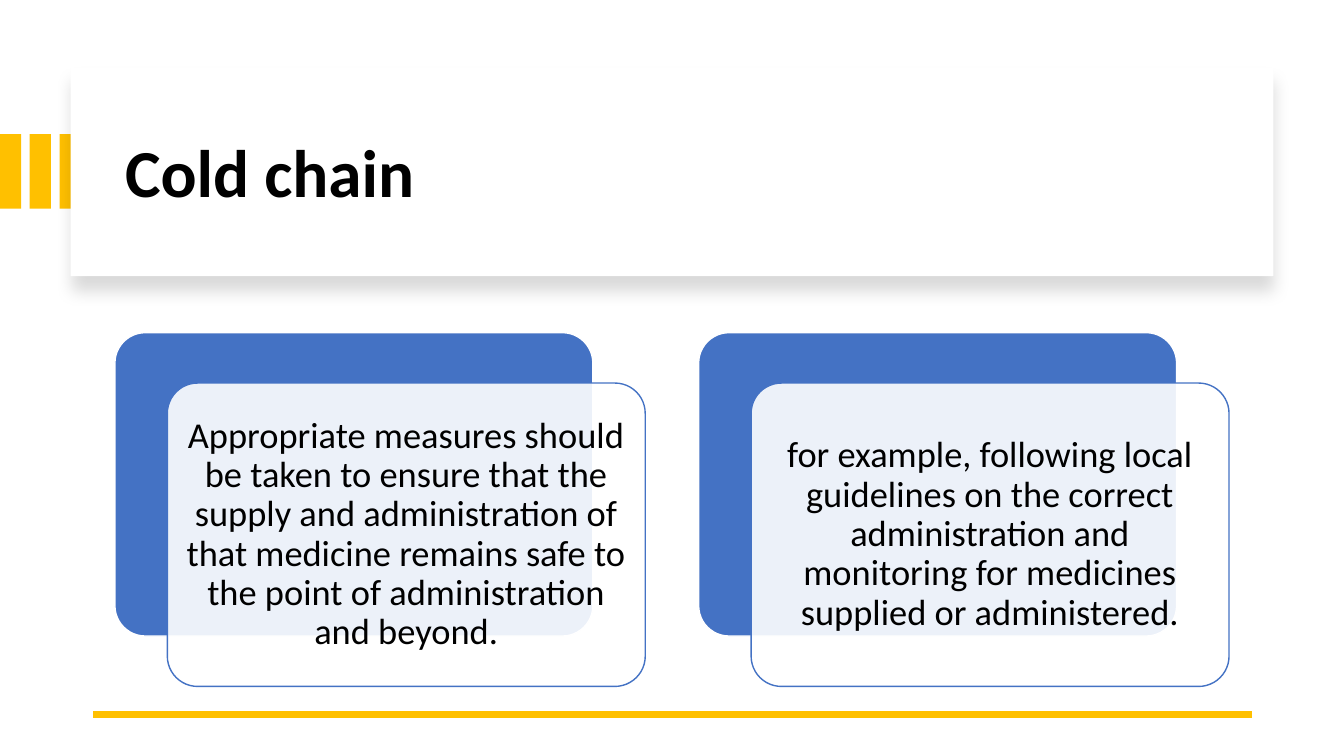
import dataclasses
import lxml.etree
import pptx
import pptx.dml.color
import pptx.enum.shapes
import pptx.enum.text
import pptx.oxml.ns
import pptx.util

Inches = pptx.util.Inches
Pt = pptx.util.Pt
Align = pptx.enum.text.PP_ALIGN
Kind = pptx.enum.shapes.MSO_SHAPE
qn = pptx.oxml.ns.qn

HUES = {"gold": "FFC000", "blue": "4472C4", "white": "FFFFFF", "black": "000000"}
FONT = "Calibri"


@dataclasses.dataclass
class Box:
    left: float
    top: float
    width: float
    height: float

    def lengths(self) -> list:
        return [Inches(v) for v in (self.left, self.top, self.width, self.height)]


@dataclasses.dataclass
class Card:
    left: float
    text: str


CARDS = [
    Card(1.14, "Appropriate measures should be taken to ensure that the supply and "
               "administration of that medicine remains safe to the point of "
               "administration and beyond."),
    Card(6.93, "for example, following local guidelines on the correct administration "
               "and monitoring for medicines supplied or administered."),
]


def hue(name: str) -> pptx.dml.color.RGBColor:
    return pptx.dml.color.RGBColor.from_string(HUES[name])


def draw(slide, kind, box: Box, fill: str, line: str = ""):
    """Add a filled shape, outlined only when a line colour is given."""
    shape = slide.shapes.add_shape(kind, *box.lengths())
    shape.shadow.inherit = False
    shape.fill.solid()
    shape.fill.fore_color.rgb = hue(fill)
    if line:
        shape.line.color.rgb = hue(line)
        shape.line.width = Pt(1)
    else:
        shape.line.fill.background()
    return shape


def write(shape, text: str, *, size: float, bold: bool = False,
          align=Align.LEFT, inset: float = 0.1) -> None:
    """Set one middle-anchored paragraph and its format."""
    frame = shape.text_frame
    frame.word_wrap = True
    frame.auto_size = pptx.enum.text.MSO_AUTO_SIZE.NONE
    frame.vertical_anchor = pptx.enum.text.MSO_ANCHOR.MIDDLE
    frame.margin_left = frame.margin_right = Inches(inset)
    para = frame.paragraphs[0]
    para.alignment = align
    para.line_spacing = 0.9
    run = para.add_run()
    run.text = text
    run.font.name = FONT
    run.font.size = Pt(size)
    run.font.bold = bold
    run.font.color.rgb = hue("black")


def shade(shape) -> None:
    """Cast a soft shadow straight down."""
    list_ = shape.element.spPr.find(qn("a:effectLst"))
    cast = lxml.etree.SubElement(
        list_, qn("a:outerShdw"), blurRad=str(Pt(11)), dist=str(Pt(10)),
        dir="5400000", algn="t", rotWithShape="0")
    tint = lxml.etree.SubElement(cast, qn("a:srgbClr"), val=HUES["black"])
    lxml.etree.SubElement(tint, qn("a:alpha"), val="15000")


def fade(shape, part: int) -> None:
    """Set the opacity of a solid fill in percent."""
    tint = shape.element.spPr.find(qn("a:solidFill"))[0]
    lxml.etree.SubElement(tint, qn("a:alpha"), val=str(part * 1000))


def header(slide) -> None:
    # Gold bars at the left edge
    for i in range(3):
        draw(slide, Kind.RECTANGLE, Box(0.295 * i, 1.33, 0.21, 0.74), "gold")

    # White panel with the title on top of it
    panel = draw(slide, Kind.RECTANGLE, Box(0.7, 0.67, 11.93, 2.07), "white")
    shade(panel)
    title = slide.shapes.title
    panel.element.addnext(title.element)
    title.left, title.top, title.width, title.height = Box(1.14, 0.89, 11.13, 1.7).lengths()
    write(title, "Cold chain", size=48, bold=True)


def rule(slide) -> None:
    line = slide.shapes.add_connector(
        pptx.enum.shapes.MSO_CONNECTOR.STRAIGHT,
        Inches(12.42), Inches(7.09), Inches(0.92), Inches(7.09))
    line.line.color.rgb = hue("gold")
    line.line.width = Pt(4.5)
    lxml.etree.SubElement(line.element.spPr, qn("a:effectLst"))


def stack(slide, card: Card) -> None:
    """Draw a blue back plate and the offset text plate over it."""
    back = Box(card.left, 3.3, 4.74, 3.01)
    front = dataclasses.replace(back, left=back.left + 0.52, top=back.top + 0.5)
    base = draw(slide, Kind.ROUNDED_RECTANGLE, back, "blue", "white")
    plate = draw(slide, Kind.ROUNDED_RECTANGLE, front, "white", "blue")
    base.adjustments[0] = plate.adjustments[0] = 0.1
    fade(plate, 90)
    write(plate, card.text, size=26, align=Align.CENTER)


def main() -> None:
    deck = pptx.Presentation()
    deck.slide_width, deck.slide_height = Inches(13.33), Inches(7.5)
    slide = deck.slides.add_slide(deck.slide_layouts.get_by_name("Title Only"))
    header(slide)
    rule(slide)
    for card in CARDS:
        stack(slide, card)
    deck.save("out.pptx")


if __name__ == "__main__":
    main()
